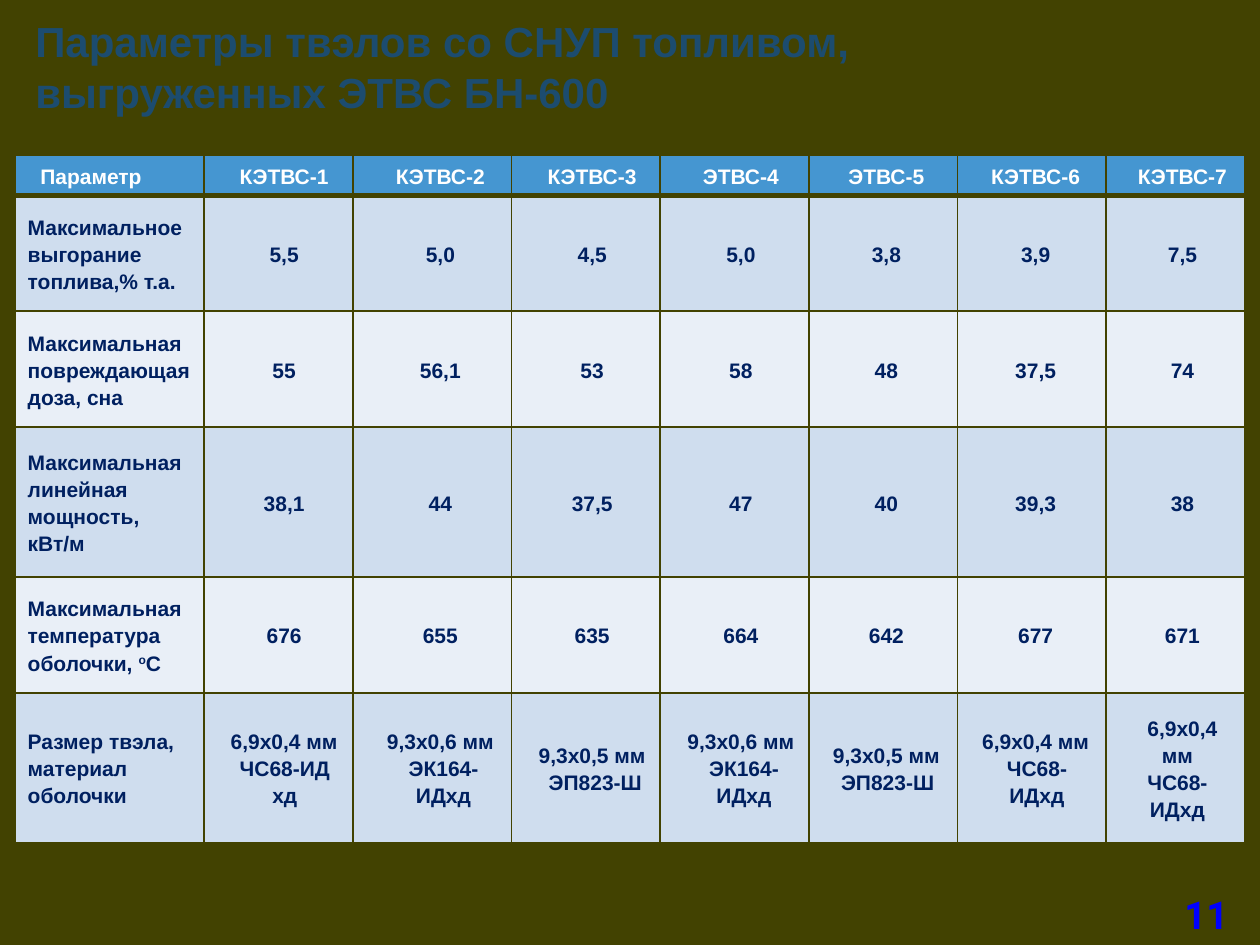
from lxml import etree
from pptx import Presentation
from pptx.dml.color import RGBColor
from pptx.enum import text
from pptx.oxml import ns
from pptx.util import Inches, Pt

COLORS = {
    "ground": "424201", "title": "1C4C6F", "head": "4596D1", "white": "FFFFFF",
    "dark_band": "CFDDEE", "light_band": "E9EFF7", "body": "002060", "number": "0000FF",
}

COL_WIDTHS = [1.5, 1.18, 1.26, 1.18, 1.18, 1.18, 1.18, 1.1]
ROW_HEIGHTS = [0.32, 0.92, 0.92, 1.19, 0.92, 1.19]
# Left margin and first-line indent of each column
INDENTS = [(0, 0), (0.1, -0.01), (0.18, -0.05), (0.15, -0.05),
           (0.15, -0.05), (0.07, -0.02), (0.08, -0.02), (0.03, 0.08)]

# \v is a line break; text between ^ marks is raised
ROWS = [
    ["Параметр", "КЭТВС-1", "КЭТВС-2", "КЭТВС-3", "ЭТВС-4", "ЭТВС-5", "КЭТВС-6", "КЭТВС-7"],
    ["Максимальное выгорание топлива,% т.а.", "5,5", "5,0", "4,5", "5,0", "3,8", "3,9", "7,5"],
    ["Максимальная повреждающая доза, сна", "55", "56,1", "53", "58", "48", "37,5", "74"],
    ["Максимальная линейная мощность, кВт/м", "38,1", "44", "37,5", "47", "40", "39,3", "38"],
    ["Максимальная температура оболочки, ^о^С", "676", "655", "635", "664", "642", "677", "671"],
    ["Размер твэла,\vматериал оболочки", "6,9х0,4 мм\vЧС68-ИД хд", "9,3х0,6 мм\vЭК164-ИДхд",
     "9,3х0,5 мм\vЭП823-Ш", "9,3х0,6 мм\vЭК164-ИДхд", "9,3х0,5 мм\vЭП823-Ш",
     "6,9х0,4 мм\vЧС68-ИДхд", "6,9х0,4 мм\vЧС68-ИДхд"],
]


def rgb(name):
    return RGBColor.from_string(COLORS[name])


class Deck:
    """Holds the style and the current slide."""

    font = "Arial"
    cell_size = 12

    def __init__(self, prs):
        self.slide = prs.slides.add_slide(prs.slide_layouts[5])
        fill = self.slide.background.fill
        fill.solid()
        fill.fore_color.rgb = rgb("ground")

    def format_runs(self, p, size, color, font=None):
        for r in p.runs:
            r.font.name = font or self.font
            r.font.size = Pt(size)
            r.font.bold = True
            r.font.color.rgb = rgb(color)

    def fill_frame(self, sp, box, words, size, color, align, font=None):
        sp.left, sp.top, sp.width, sp.height = map(Inches, box)
        tf = sp.text_frame
        tf.word_wrap = True
        tf.auto_size = text.MSO_AUTO_SIZE.NONE
        tf.vertical_anchor = text.MSO_ANCHOR.MIDDLE
        tf.margin_left = tf.margin_right = tf.margin_top = tf.margin_bottom = 0
        p = tf.paragraphs[0]
        p.text = words
        p.alignment = align
        self.format_runs(p, size, color, font)

    def title(self, box, words):
        self.fill_frame(self.slide.shapes.title, box, words, 24, "title", text.PP_ALIGN.LEFT)

    def page_number(self, box, words):
        sp = self.slide.shapes.add_textbox(*map(Inches, box))
        self.fill_frame(sp, box, words, 22, "number", text.PP_ALIGN.RIGHT, "Roboto")

    def borders(self, cell, top, bottom):
        tc_pr = cell._tc.get_or_add_tcPr()
        for i, (side, width) in enumerate(zip("LRTB", (1, 1, top, bottom))):
            ln = etree.Element(ns.qn(f"a:ln{side}"), w=str(Pt(width)))
            solid = etree.SubElement(ln, ns.qn("a:solidFill"))
            etree.SubElement(solid, ns.qn("a:srgbClr"), val=COLORS["ground"])
            tc_pr.insert(i, ln)

    def cell(self, cell, words, fill, color, centred, indent):
        cell.fill.solid()
        cell.fill.fore_color.rgb = rgb(fill)
        cell.vertical_anchor = text.MSO_ANCHOR.MIDDLE
        p = cell.text_frame.paragraphs[0]
        pieces = words.split("^")
        p.text = pieces[0]
        for i, piece in enumerate(pieces[1:]):
            r = p.add_run()
            r.text = piece
            if i % 2 == 0:
                r._r.get_or_add_rPr().set("baseline", "30000")
        p.line_spacing = 1.15
        p.alignment = text.PP_ALIGN.CENTER if centred else text.PP_ALIGN.LEFT
        p_pr = p._p.get_or_add_pPr()
        p_pr.set("marL", str(Inches(indent[0])))
        p_pr.set("indent", str(Inches(indent[1])))
        self.format_runs(p, self.cell_size, color)

    def table(self, left, top, rows):
        size = Inches(sum(COL_WIDTHS)), Inches(sum(ROW_HEIGHTS))
        table = self.slide.shapes.add_table(
            len(rows), len(COL_WIDTHS), Inches(left), Inches(top), *size).table
        for col, width in zip(table.columns, COL_WIDTHS):
            col.width = Inches(width)
        for i, words in enumerate(rows):
            table.rows[i].height = Inches(ROW_HEIGHTS[i])
            head = i == 0
            fill = "head" if head else "dark_band" if i % 2 else "light_band"
            for j, value in enumerate(words):
                cell = table.cell(i, j)
                indent = (0.1, 0) if head and j == 0 else INDENTS[j]
                self.cell(cell, value, fill, "white" if head else "body", j > 0, indent)
                # A thick rule parts the header from the body
                self.borders(cell, 3 if i == 1 else 1, 3 if head else 1)


def main():
    prs = Presentation()
    prs.slide_width, prs.slide_height = Inches(10), Inches(7.5)
    deck = Deck(prs)

    # Title
    deck.title((0.28, 0, 8.58, 1.05), "Параметры твэлов со СНУП топливом,\vвыгруженных ЭТВС БН-600")
    # Parameters of the fuel assemblies
    deck.table(0.12, 1.23, ROWS)
    # Page number
    deck.page_number((9.06, 7.05, 0.69, 0.41), "11")

    prs.save("out.pptx")


if __name__ == "__main__":
    main()
